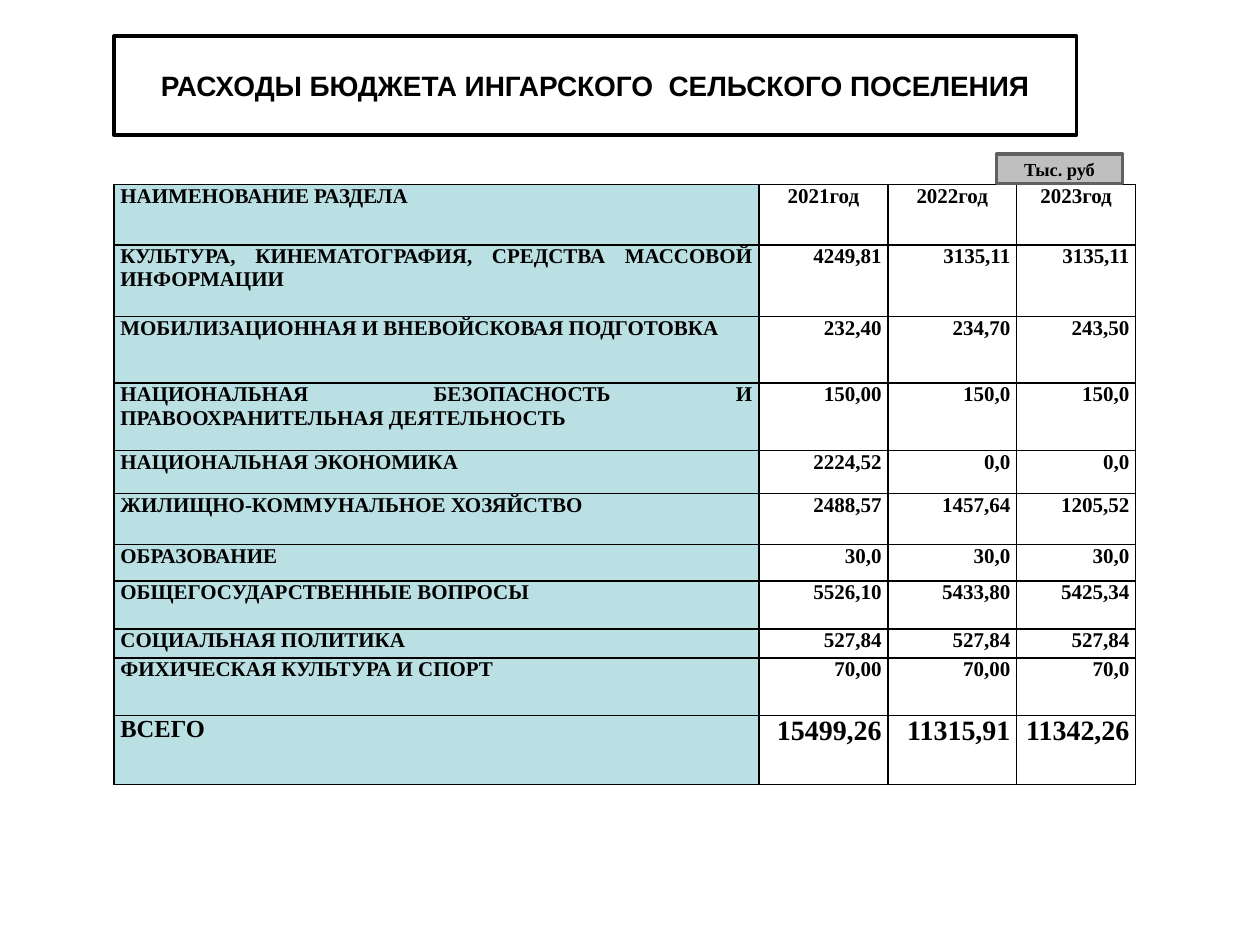
from lxml import etree
from pptx import Presentation
from pptx.dml.color import RGBColor
from pptx.enum.shapes import MSO_SHAPE
from pptx.enum.text import MSO_ANCHOR, PP_ALIGN
from pptx.oxml.ns import qn
from pptx.util import Pt

RECT = MSO_SHAPE.RECTANGLE
MIDDLE, TOP = MSO_ANCHOR.MIDDLE, MSO_ANCHOR.TOP
LEFT, CENTER = PP_ALIGN.LEFT, PP_ALIGN.CENTER
RIGHT, JUSTIFY = PP_ALIGN.RIGHT, PP_ALIGN.JUSTIFY

BLACK = RGBColor(0x00, 0x00, 0x00)
WHITE = RGBColor(0xFF, 0xFF, 0xFF)
TEAL = RGBColor(0xBB, 0xE0, 0xE3)
SILVER = RGBColor(0xBF, 0xBF, 0xBF)
GRAY = RGBColor(0x60, 0x60, 0x60)

SANS, SERIF = "Arial", "Times New Roman"

WIDTHS = [368.6, 73.6, 73.6, 68]
# Row height, section name, then one amount per year
ROWS = [
    (34.4, "НАИМЕНОВАНИЕ РАЗДЕЛА", "2021год", "2022год", "2023год"),
    (41, "КУЛЬТУРА, КИНЕМАТОГРАФИЯ, СРЕДСТВА МАССОВОЙ ИНФОРМАЦИИ",
     "4249,81", "3135,11", "3135,11"),
    (38, "МОБИЛИЗАЦИОННАЯ И ВНЕВОЙСКОВАЯ ПОДГОТОВКА",
     "232,40", "234,70", "243,50"),
    (38.6, "НАЦИОНАЛЬНАЯ БЕЗОПАСНОСТЬ И ПРАВООХРАНИТЕЛЬНАЯ ДЕЯТЕЛЬНОСТЬ",
     "150,00", "150,0", "150,0"),
    (24.5, "НАЦИОНАЛЬНАЯ ЭКОНОМИКА", "2224,52", "0,0", "0,0"),
    (29.3, "ЖИЛИЩНО-КОММУНАЛЬНОЕ ХОЗЯЙСТВО", "2488,57", "1457,64", "1205,52"),
    (20.7, "ОБРАЗОВАНИЕ", "30,0", "30,0", "30,0"),
    (27.4, "ОБЩЕГОСУДАРСТВЕННЫЕ ВОПРОСЫ", "5526,10", "5433,80", "5425,34"),
    (16.6, "СОЦИАЛЬНАЯ ПОЛИТИКА", "527,84", "527,84", "527,84"),
    (33.1, "ФИХИЧЕСКАЯ КУЛЬТУРА И СПОРТ", "70,00", "70,00", "70,0"),
    (39.4, "ВСЕГО", "15499,26", "11315,91", "11342,26"),
]


def write(frame, text, face, size, align):
    para = frame.paragraphs[0]
    para.text = text
    para.alignment = align
    font = para.font
    font.name, font.size, font.bold = face, Pt(size), True
    font.color.rgb = BLACK
    return para


def add_box(slide, place, text, face, size, fill, edge):
    box = slide.shapes.add_shape(RECT, *map(Pt, place))
    box.shadow.inherit = False
    box.fill.solid()
    box.fill.fore_color.rgb = fill
    box.line.color.rgb = edge
    box.line.width = Pt(2)
    frame = box.text_frame
    frame.word_wrap = True
    frame.vertical_anchor = MIDDLE
    write(frame, text, face, size, CENTER)


def add_edges(cell):
    """Draw a thin black line on all four sides of the cell."""
    props = cell._tc.get_or_add_tcPr()
    for spot, side in enumerate(("lnL", "lnR", "lnT", "lnB")):
        line = etree.Element(qn(f"a:{side}"), w=str(Pt(1)))
        fill = etree.SubElement(line, qn("a:solidFill"))
        etree.SubElement(fill, qn("a:srgbClr"), val=str(BLACK))
        props.insert(spot, line)


def fill_cell(cell, text, size, align, name):
    """Set one cell; name tells a section name from an amount."""
    cell.margin_left = cell.margin_right = Pt(3.6)
    cell.margin_top = cell.margin_bottom = 0
    cell.vertical_anchor = TOP
    para = write(cell.text_frame, text, SERIF, size, align)
    if name:
        cell.fill.solid()
        cell.fill.fore_color.rgb = TEAL
    else:
        cell.fill.background()
        para.space_before = Pt(3)
    add_edges(cell)


def add_budget(slide, left, top):
    high = sum(row[0] for row in ROWS)
    place = map(Pt, (left, top, sum(WIDTHS), high))
    table = slide.shapes.add_table(len(ROWS), len(WIDTHS), *place).table
    table.first_row = table.horz_banding = False
    for col, width in zip(table.columns, WIDTHS):
        col.width = Pt(width)
    last = len(ROWS) - 1
    for r, (height, *texts) in enumerate(ROWS):
        table.rows[r].height = Pt(height)
        for c, text in enumerate(texts):
            name = c == 0
            if r == 0:
                align = LEFT if name else CENTER
            else:
                align = JUSTIFY if name else RIGHT
            size = 12
            if r == last:
                size = 14 if name else 16
            fill_cell(table.cell(r, c), text, size, align, name)


def main():
    deck = Presentation()
    deck.slide_width, deck.slide_height = Pt(720), Pt(540)
    slide = deck.slides.add_slide(deck.slide_layouts[6])
    add_budget(slide, 65.2, 105.5)
    add_box(slide, (65.2, 20.6, 550, 56.6),
            "РАСХОДЫ БЮДЖЕТА ИНГАРСКОГО  СЕЛЬСКОГО ПОСЕЛЕНИЯ",
            SANS, 16, WHITE, BLACK)
    add_box(slide, (569.5, 88, 72, 17), "Тыс. руб", SERIF, 10.5, SILVER, GRAY)
    deck.save("out.pptx")


if __name__ == "__main__":
    main()
